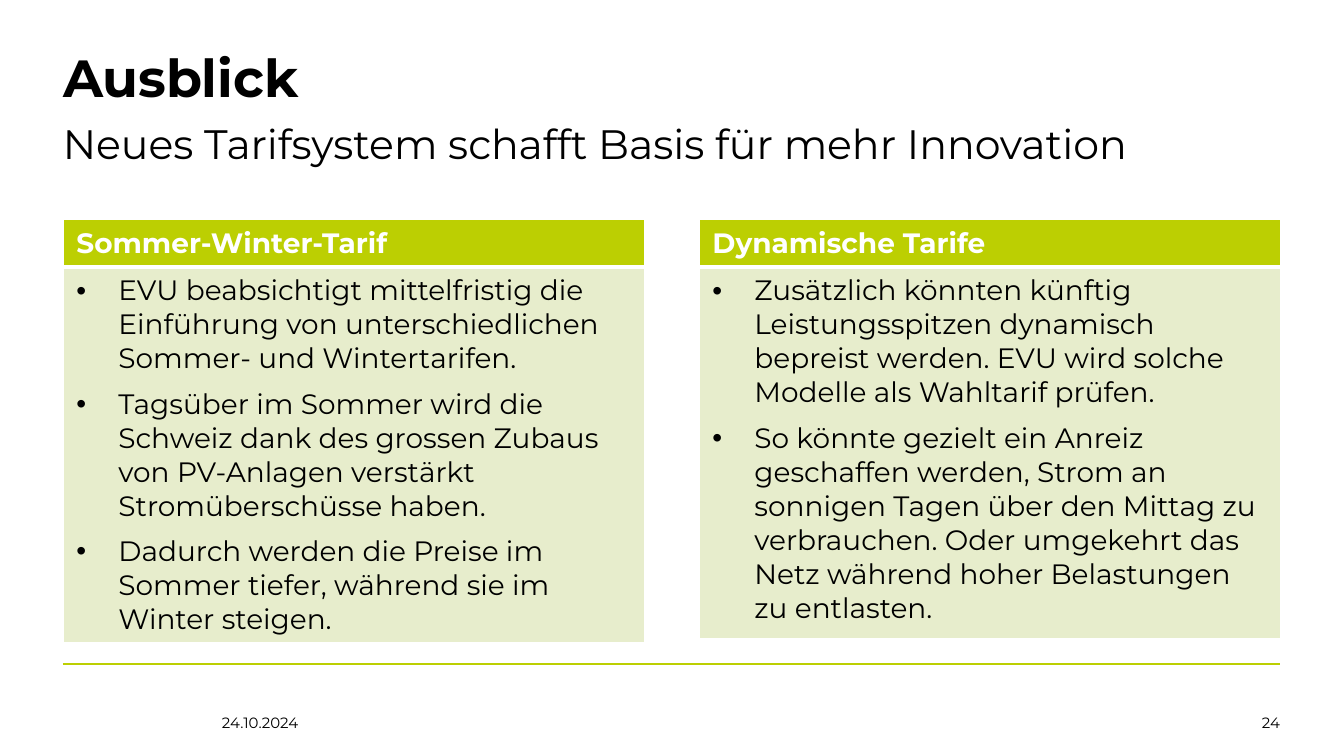
import pptx
import pptx.chart.data
import pptx.dml.color
import pptx.enum.shapes
import pptx.enum.text
import pptx.oxml
import pptx.oxml.ns
import pptx.util

FONT = "Montserrat"
BLACK, WHITE, GREEN, PALE = "000000", "FFFFFF", "BCCF02", "E7EDCC"
ANCHOR = pptx.enum.text.MSO_ANCHOR
ALIGN = pptx.enum.text.PP_ALIGN

TITLE = "Ausblick"
SUBTITLE = "Neues Tarifsystem schafft Basis für mehr Innovation"
DATE, PAGE = "24.10.2024", "24"
TARIFFS = [
    ("Sommer-Winter-Tarif", [
        "EVU beabsichtigt mittelfristig die Einführung von unterschiedlichen "
        "Sommer- und Wintertarifen.",
        "Tagsüber im Sommer wird die Schweiz dank des grossen Zubaus von "
        "PV-Anlagen verstärkt Stromüberschüsse haben.",
        "Dadurch werden die Preise im Sommer tiefer, während sie im Winter steigen.",
    ]),
    ("Dynamische Tarife", [
        "Zusätzlich könnten künftig Leistungsspitzen dynamisch bepreist werden. "
        "EVU wird solche Modelle als Wahltarif prüfen.",
        "So könnte gezielt ein Anreiz geschaffen werden, Strom an sonnigen Tagen "
        "über den Mittag zu verbrauchen. Oder umgekehrt das Netz während hoher "
        "Belastungen zu entlasten.",
    ]),
]

LEFT, RIGHT = 63, 1280
TABLE_TOP, TABLE_W = 219, 582
ROW_HEIGHTS = (48, 372)
INDENT = 42


def px(n):
    return pptx.util.Emu(round(n * 914400 / 134.4))


def rgb(color):
    return pptx.dml.color.RGBColor.from_string(color)


def write(p, text, size, color=BLACK, bold=False):
    r = p.add_run()
    r.text = text
    style = {"name": FONT, "size": pptx.util.Pt(size), "bold": bold}
    for key, value in style.items():
        setattr(r.font, key, value)
    r.font.color.rgb = rgb(color)


def set_frame(tf, anchor, top=0, wrap=True):
    values = {"margin_left": 0, "margin_top": px(top), "margin_right": 0,
              "margin_bottom": 0, "vertical_anchor": anchor, "word_wrap": wrap,
              "auto_size": pptx.enum.text.MSO_AUTO_SIZE.NONE}
    for key, value in values.items():
        setattr(tf, key, value)


def add_text(s, box, text, size, anchor, align=ALIGN.LEFT, wrap=True):
    tf = s.shapes.add_textbox(*map(px, box)).text_frame
    set_frame(tf, anchor, wrap=wrap)
    tf.paragraphs[0].alignment = align
    write(tf.paragraphs[0], text, size)


def add_bullet(p):
    pPr = p._p.get_or_add_pPr()
    pPr.set("marL", str(px(INDENT)))
    pPr.set("indent", str(-px(INDENT)))
    ns = pptx.oxml.ns.nsdecls("a")
    pPr.append(pptx.oxml.parse_xml(f'<a:buFont {ns} typeface="Arial"/>'))
    pPr.append(pptx.oxml.parse_xml(f'<a:buChar {ns} char="•"/>'))


def style_cell(cell, color, bottom_width):
    cell.fill.solid()
    cell.fill.fore_color.rgb = rgb(color)
    widths = {"lnL": 1, "lnR": 1, "lnT": 1, "lnB": bottom_width}
    for i, (tag, width) in enumerate(widths.items()):
        # Borders must precede the fill in the cell properties.
        cell._tc.get_or_add_tcPr().insert(i, pptx.oxml.parse_xml(
            f'<a:{tag} {pptx.oxml.ns.nsdecls("a")} w="{pptx.util.Pt(width)}">'
            f'<a:solidFill><a:srgbClr val="{WHITE}"/></a:solidFill></a:{tag}>'))


def add_tariff(s, x, heading, points):
    box = (x, TABLE_TOP, TABLE_W, sum(ROW_HEIGHTS))
    table = s.shapes.add_table(2, 1, *map(px, box)).table
    table.first_row = table.horz_banding = False
    for row, height in zip(table.rows, ROW_HEIGHTS):
        row.height = px(height)

    head, body = table.cell(0, 0), table.cell(1, 0)
    style_cell(head, GREEN, 3)
    head.vertical_anchor = ANCHOR.MIDDLE
    write(head.text_frame.paragraphs[0], heading, 15, WHITE, True)

    style_cell(body, PALE, 1)
    tf = body.text_frame
    for i, point in enumerate(points):
        p = tf.add_paragraph() if i else tf.paragraphs[0]
        p.space_after = pptx.util.Pt(6)
        add_bullet(p)
        write(p, point, 15)


def add_rule(s, y):
    line = s.shapes.add_connector(pptx.enum.shapes.MSO_CONNECTOR.STRAIGHT,
                                  px(LEFT), px(y), px(RIGHT), px(y))
    line.line.color.rgb = rgb(GREEN)
    line.line.width = pptx.util.Pt(1)
    line._element.spPr.append(pptx.oxml.parse_xml(
        f'<a:effectLst {pptx.oxml.ns.nsdecls("a")}/>'))


def main():
    prs = pptx.Presentation()
    prs.slide_width, prs.slide_height = px(1344), px(756)
    s = prs.slides.add_slide(prs.slide_layouts[5])

    title = s.shapes.title
    title.left, title.top, title.width, title.height = map(px, (LEFT, 30, 1218, 79))
    set_frame(title.text_frame, ANCHOR.TOP, top=15)
    p = title.text_frame.paragraphs[0]
    p.alignment = ALIGN.LEFT
    write(p, TITLE, 28, bold=True)

    add_text(s, (LEFT, 118, 1217, 52), SUBTITLE, 22, ANCHOR.TOP)
    for x, (heading, points) in zip((LEFT, RIGHT + 1 - TABLE_W), TARIFFS):
        add_tariff(s, x, heading, points)
    add_rule(s, 664)
    add_text(s, (222, 697, 211, 35), DATE, 8, ANCHOR.BOTTOM)
    add_text(s, (1227, 696, 53, 35), PAGE, 8, ANCHOR.BOTTOM, ALIGN.RIGHT, wrap=False)
    prs.save("out.pptx")


if __name__ == "__main__":
    main()
